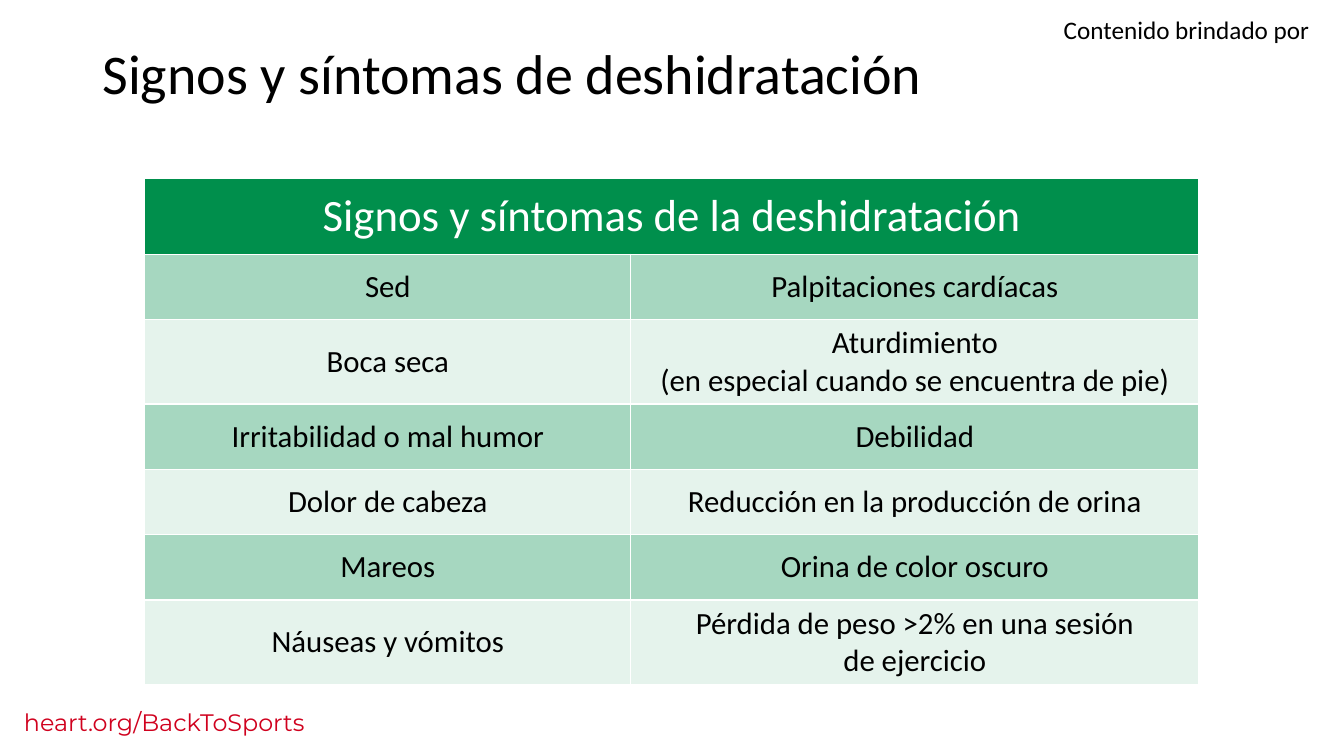
import dataclasses

import lxml.etree
import pptx
import pptx.dml.color
import pptx.enum.text
import pptx.oxml.ns
import pptx.util

Pt = pptx.util.Pt
Align = pptx.enum.text.PP_ALIGN
Anchor = pptx.enum.text.MSO_ANCHOR
qn = pptx.oxml.ns.qn


@dataclasses.dataclass(frozen=True)
class Theme:
    """Colours, fonts and type sizes of the slide."""
    green: str = "008F4C"
    red: str = "D0011E"
    black: str = "000000"
    white: str = "FFFFFF"
    body_font: str = "Calibri"
    link_font: str = "Montserrat"
    title_size: int = 40
    header_size: int = 32
    symptom_size: int = 22
    credit_size: int = 18
    link_size: int = 17
    dark_band: int = 35
    light_band: int = 10


THEME = Theme()
HEADING = "Signos y síntomas de la deshidratación"
SYMPTOMS = [
    ("Sed", "Palpitaciones cardíacas"),
    ("Boca seca", "Aturdimiento\n(en especial cuando se encuentra de pie)"),
    ("Irritabilidad o mal humor", "Debilidad"),
    ("Dolor de cabeza", "Reducción en la producción de orina"),
    ("Mareos", "Orina de color oscuro"),
    ("Náuseas y vómitos", "Pérdida de peso >2% en una sesión\vde ejercicio"),
]


def write(frame, text, size, color, font=THEME.body_font, align=Align.LEFT):
    """Fill a text frame with evenly formatted paragraphs."""
    frame.text = text
    frame.word_wrap = True
    for paragraph in frame.paragraphs:
        paragraph.alignment = align
        paragraph.font.size = Pt(size)
        paragraph.font.name = font
        paragraph.font.color.rgb = pptx.dml.color.RGBColor.from_string(color)


def add_label(slide, box, *style):
    """Place a line of text in its own box."""
    label = slide.shapes.add_textbox(*map(Pt, box))
    write(label.text_frame, *style)


def place_title(slide, box, text):
    """Move and format the title placeholder."""
    title = slide.shapes.title
    title.left, title.top, title.width, title.height = map(Pt, box)
    write(title.text_frame, text, THEME.title_size, THEME.black)
    title.text_frame.vertical_anchor = Anchor.TOP
    title.text_frame.paragraphs[0].line_spacing = 0.9


def style_cell(cell, opacity):
    """Give a cell white borders and a green fill of the given opacity."""
    properties = cell._tc.get_or_add_tcPr()
    for side in ("a:lnL", "a:lnR", "a:lnT", "a:lnB"):
        border = lxml.etree.SubElement(properties, qn(side), w=str(Pt(1)))
        paint = lxml.etree.SubElement(border, qn("a:solidFill"))
        lxml.etree.SubElement(paint, qn("a:srgbClr"), val=THEME.white)
    cell.fill.solid()
    cell.fill.fore_color.rgb = pptx.dml.color.RGBColor.from_string(THEME.green)
    if opacity < 100:
        green = properties.find(qn("a:solidFill")).find(qn("a:srgbClr"))
        lxml.etree.SubElement(green, qn("a:alpha"), val=str(opacity * 1000))
    cell.vertical_anchor = Anchor.MIDDLE


def add_symptom_table(slide, box):
    """Build the two-column symptom table under a merged heading."""
    table = slide.shapes.add_table(len(SYMPTOMS) + 1, 2, *map(Pt, box)).table
    left_width = 347
    table.columns[0].width = Pt(left_width)
    table.columns[1].width = Pt(box[2] - left_width)
    table.rows[0].height = Pt(54)
    heading = table.cell(0, 0)
    heading.merge(table.cell(0, 1))
    for cell in table.rows[0].cells:
        style_cell(cell, 100)
    write(heading.text_frame, HEADING, THEME.header_size, THEME.white, align=Align.CENTER)
    for row, pair in enumerate(SYMPTOMS, start=1):
        two_lines = len(pair[1].splitlines()) > 1
        table.rows[row].height = Pt(60.4 if two_lines else 46.7)
        for column, symptom in enumerate(pair):
            cell = table.cell(row, column)
            style_cell(cell, THEME.dark_band if row % 2 else THEME.light_band)
            write(cell.text_frame, symptom, THEME.symptom_size, THEME.black, align=Align.CENTER)


def main():
    """Build and save the dehydration slide."""
    deck = pptx.Presentation()
    deck.slide_width, deck.slide_height = Pt(960), Pt(540)
    slide = deck.slides.add_slide(deck.slide_layouts[5])
    add_label(slide, (10, 502, 312, 28), "heart.org/BackToSports",
              THEME.link_size, THEME.red, THEME.link_font)
    add_label(slide, (747.5, 6.5, 200, 29), "Contenido brindado por",
              THEME.credit_size, THEME.black, THEME.body_font, Align.CENTER)
    place_title(slide, (66, 29, 692, 60), "Signos y síntomas de deshidratación")
    add_symptom_table(slide, (103.5, 127.5, 753, 361.6))
    deck.save("out.pptx")


if __name__ == "__main__":
    main()
